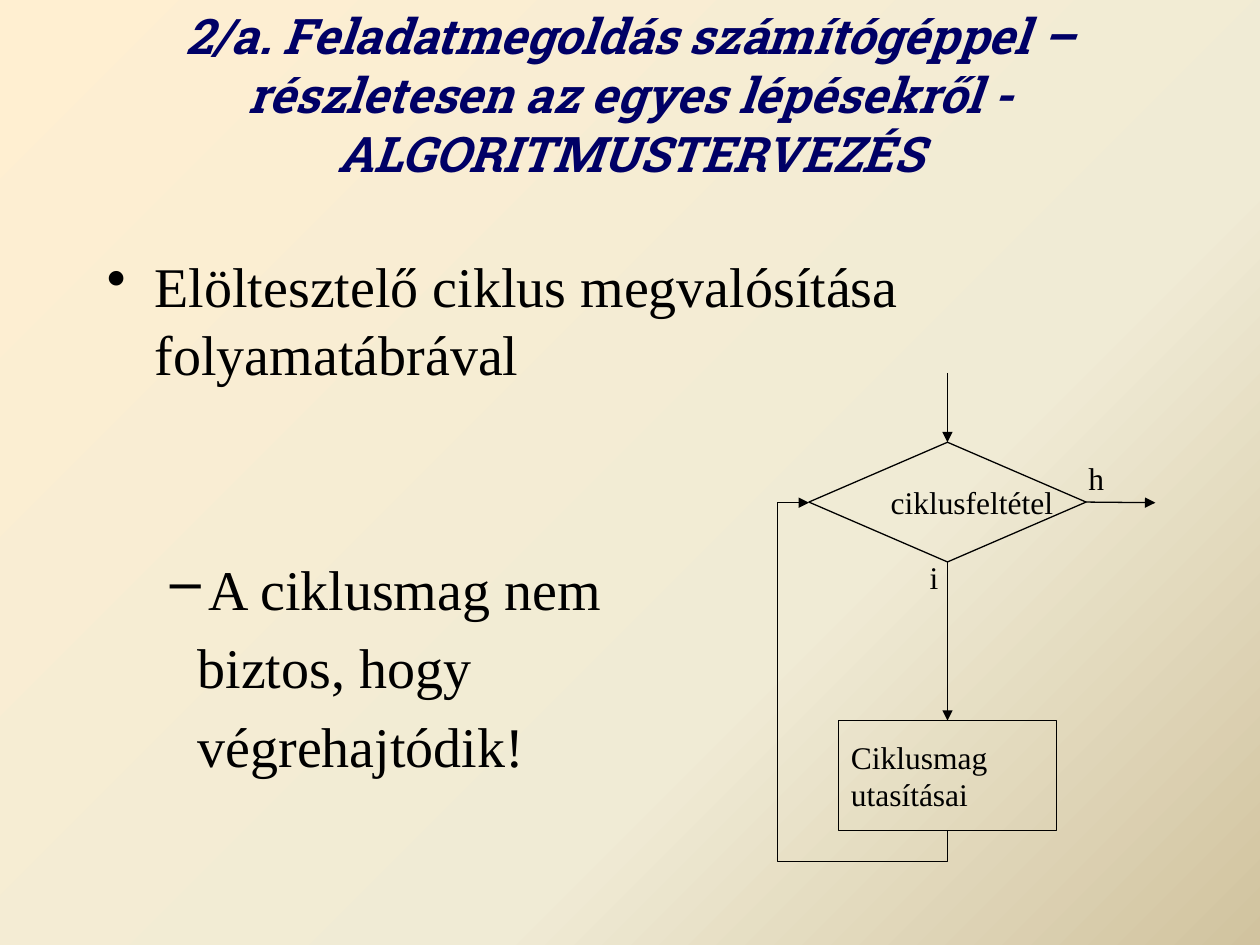
import copy

import pptx
import pptx.dml.color
import pptx.enum.shapes
import pptx.enum.text
import pptx.oxml
import pptx.oxml.ns
import pptx.util

COLORS = {"ink": "000000", "title": "000066",
          "cream": "FFEFD1", "sand": "F0EBD5", "tan": "D1C39F"}
SERIF, SLAB = "Times New Roman", "Roboto Slab"
MIDDLE = pptx.enum.text.MSO_ANCHOR.MIDDLE
CENTER = pptx.enum.text.PP_ALIGN.CENTER
FORM = pptx.enum.shapes.MSO_SHAPE
WIRE = pptx.enum.shapes.MSO_CONNECTOR
qn = pptx.oxml.ns.qn


def unit(n):
    """Grid of 100 columns by 75 rows on the slide."""
    return pptx.util.Inches(n / 10)


def color(name):
    return pptx.dml.color.RGBColor.from_string(COLORS[name])


def child(node, tag, **attrs):
    part = pptx.oxml.parse_xml(f"<{tag} {pptx.oxml.ns.nsdecls('a')}/>")
    for key, value in attrs.items():
        part.set(key, str(value))
    node.append(part)
    return part


def write(frame, text, first=False, size=18, font=SERIF, ink="ink", bold=False,
          italic=False, align=None, left=0, hang=0, before=0, bullet=None, level=0):
    """Add one paragraph to a text frame."""
    para = frame.paragraphs[0] if first else frame.add_paragraph()
    run = para.add_run()
    run.text = text
    run.font.size, run.font.name = pptx.util.Pt(size), font
    run.font.bold, run.font.italic = bold, italic
    run.font.color.rgb = color(ink)
    para.level, para.space_before = level, pptx.util.Pt(before)
    if align is not None:
        para.alignment = align
    props = para._p.get_or_add_pPr()
    props.set("marL", str(unit(left)))
    props.set("indent", str(unit(-hang)))
    if bullet:
        child(props, "a:buChar", char=bullet)


def field(slide, x, y, w, h, wrap=True):
    frame = slide.shapes.add_textbox(unit(x), unit(y), unit(w), unit(h)).text_frame
    frame.word_wrap = wrap
    return frame


def node(slide, form, x, y, w, h, lines):
    shape = slide.shapes.add_shape(form, unit(x), unit(y), unit(w), unit(h))
    shape.shadow.inherit = False
    shape.fill.background()
    shape.line.color.rgb = color("ink")
    shape.line.width = pptx.util.Pt(0.75)
    frame = shape.text_frame
    frame.word_wrap, frame.vertical_anchor = False, MIDDLE
    for i, line in enumerate(lines):
        write(frame, line, first=i == 0, left=3.8, hang=3.8,
              align=pptx.enum.text.PP_ALIGN.LEFT)
    return shape


def arrow(slide, x1, y1, x2, y2, kind=WIRE.STRAIGHT, start=None, end=None):
    """Draw an arrow; start and end are (shape, side) pairs."""
    wire = slide.shapes.add_connector(kind, unit(x1), unit(y1), unit(x2), unit(y2))
    wire.line.color.rgb = color("ink")
    wire.line.width = pptx.util.Pt(0.75)
    child(wire.line._get_or_add_ln(), "a:tailEnd", type="triangle")
    child(wire._element.spPr, "a:effectLst")
    if start:
        wire.begin_connect(*start)
    if end:
        wire.end_connect(*end)
    return wire


def bend(wire, x, y, w, h):
    """Turn an elbow into a loop that leaves downward and returns rightward."""
    wire.left, wire.top, wire.width, wire.height = map(unit, (x, y, w, h))
    frame = wire._element.spPr.find(qn("a:xfrm"))
    frame.set("rot", "16200000")
    frame.set("flipH", "0")
    frame.set("flipV", "1")
    geom = wire._element.spPr.find(qn("a:prstGeom"))
    geom.set("prst", "bentConnector4")
    guides = geom.find(qn("a:avLst"))
    if guides is None:
        guides = child(geom, "a:avLst")
    for name, value in (("adj1", -9600), ("adj2", 122600)):
        child(guides, "a:gd", name=name, fmla=f"val {value}")


def backdrop(slide):
    fill = slide.background.fill
    fill.gradient()
    fill.gradient_angle = 315
    stops = slide._element.find(".//" + qn("a:gsLst"))
    stops.insert(1, copy.deepcopy(stops[0]))
    for stop, name, place in zip(fill.gradient_stops, ("cream", "sand", "tan"),
                                 (0, 0.65, 1)):
        stop.color.rgb = color(name)
        stop.position = place


def heading(slide, x, y, w, h):
    frame = field(slide, x, y, w, h)
    frame.vertical_anchor = MIDDLE
    write(frame, "2/a. Feladatmegoldás számítógéppel – részletesen az egyes "
          "lépésekről - ALGORITMUSTERVEZÉS", first=True, size=28, font=SLAB,
          ink="title", bold=True, italic=True, align=CENTER)


def body(slide, x, y, w, h):
    frame = field(slide, x, y, w, h)
    write(frame, "Elöltesztelő ciklus megvalósítása folyamatábrával", first=True,
          size=32, left=3.8, hang=3.8, before=6.4, bullet="•")
    write(frame, "A ciklusmag nem", size=32, left=8.1, hang=3.1, before=96,
          bullet="–", level=1)
    for line in ("biztos, hogy", "végrehajtódik!"):
        write(frame, line, size=32, left=7.2, before=6.4, level=1)


def flow(slide, x, y, w, h):
    axis, mid = x + 13.5, y + 10.3
    # Nodes
    test = node(slide, FORM.FLOWCHART_DECISION, axis - 11, y + 5.5, 22, 9.5,
                ["ciklusfeltétel"])
    core = node(slide, FORM.FLOWCHART_PROCESS, axis - 8.65, y + 27.6, 17.3, 8.7,
                ["Ciklusmag", "utasításai"])
    # Arrows
    arrow(slide, axis, y, axis, y + 5.5, end=(test, 0))
    arrow(slide, axis, y + 15, axis, y + 27.6, start=(test, 2), end=(core, 0))
    arrow(slide, axis + 11, mid, x + w, mid, start=(test, 3))
    loop = arrow(slide, axis, y + 36.3, axis - 11, mid, WIRE.ELBOW,
                 start=(core, 2), end=(test, 1))
    rise = 26
    bend(loop, axis - 5.5 - rise / 2, mid + rise / 2 - 5.5, rise, 11)
    # Branch labels
    for text, dx, dy, wide in (("i", 11.1, 14.2, 2.6), ("h", 23.7, 6.3, 3.4)):
        write(field(slide, x + dx, y + dy, wide, 4, wrap=False), text, first=True,
              left=3.8, hang=3.8)


def main():
    deck = pptx.Presentation()
    deck.slide_width, deck.slide_height = unit(100), unit(75)
    slide = deck.slides.add_slide(deck.slide_layouts[6])
    backdrop(slide)
    heading(slide, 7.5, 3.3, 85, 8.3)
    body(slide, 7.5, 19.5, 85, 49.6)
    flow(slide, 61.7, 29.6, 30, 38.7)
    deck.save("out.pptx")


if __name__ == "__main__":
    main()
